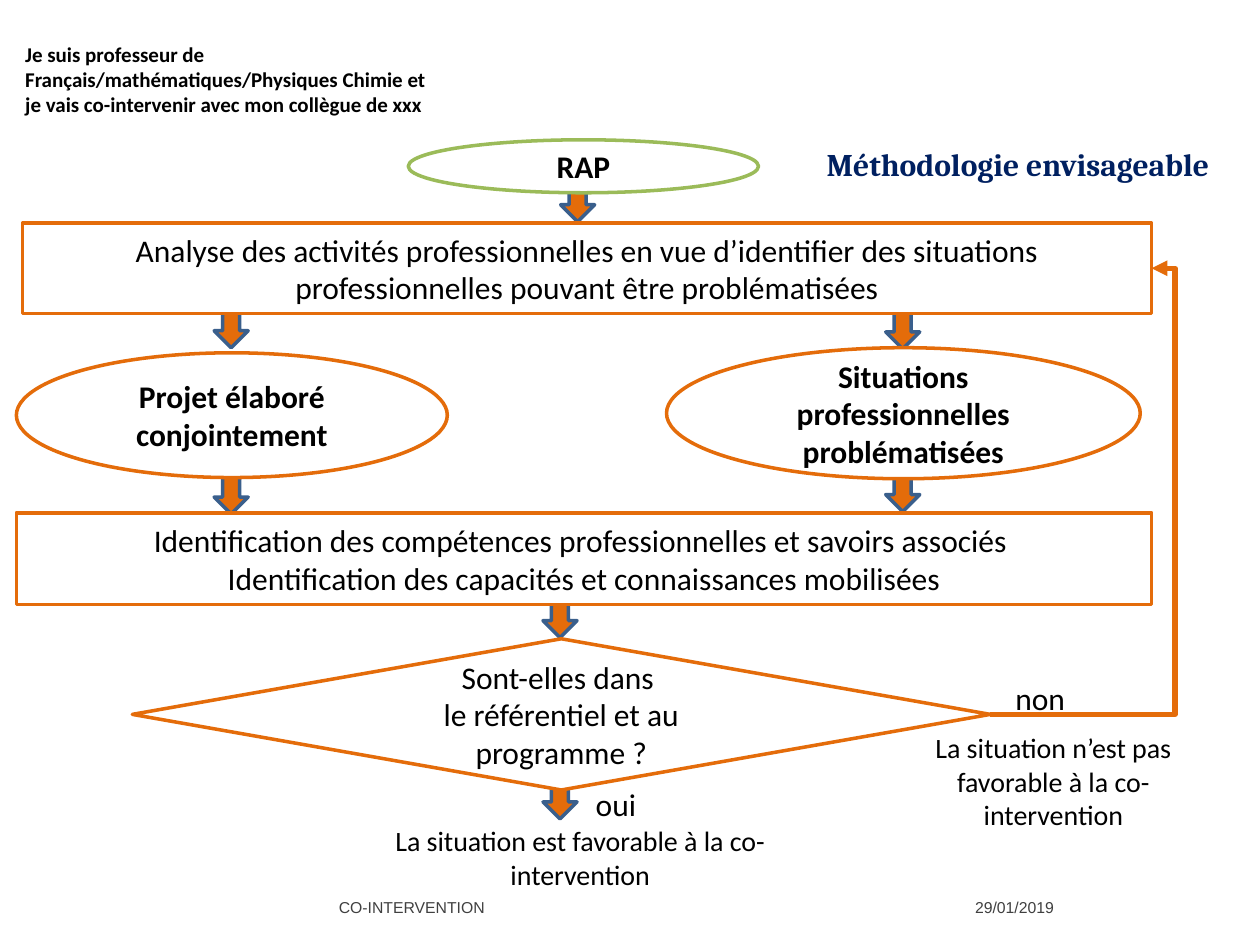
from lxml import etree
from pptx import Presentation
from pptx.dml.color import RGBColor
from pptx.enum.shapes import MSO_CONNECTOR, MSO_SHAPE
from pptx.enum.text import MSO_ANCHOR, PP_ALIGN
from pptx.oxml.ns import qn
from pptx.util import Inches, Pt

ORANGE, GREEN, BLUE = "E46C0A", "9BBB59", "3A5F8C"


def color(hex_string):
    return RGBColor.from_string(hex_string)


def write(shape, lines, size=18, bold=False, align=PP_ALIGN.LEFT,
          anchor=MSO_ANCHOR.TOP, font_name="Calibri", font_color="000000", margins=(0.1, 0.05)):
    frame = shape.text_frame
    frame.word_wrap = True
    frame.vertical_anchor = anchor
    frame.margin_left = frame.margin_right = Inches(margins[0])
    frame.margin_top = frame.margin_bottom = Inches(margins[1])
    for index, line in enumerate(lines):
        paragraph = frame.add_paragraph() if index else frame.paragraphs[0]
        paragraph.alignment = align
        for part_index, part in enumerate(line.split("\n")):
            if part_index:
                paragraph.add_line_break()
            run = paragraph.add_run()
            run.text = part
            run.font.name = font_name
            run.font.size = Pt(size)
            run.font.bold = bold
            run.font.color.rgb = color(font_color)


presentation = Presentation()
presentation.slide_width = Inches(10)
presentation.slide_height = Inches(7.5)
slide = presentation.slides.add_slide(presentation.slide_layouts[5])

title = slide.shapes.title
title.left, title.top = Inches(6.46), Inches(1.1)
title.width, title.height = Inches(3.4), Inches(0.4)
write(title, ["Méthodologie envisageable"], bold=True, font_name="Cambria", font_color="002060")
title.text_frame.word_wrap = False

arrows = [(1.7, 3.74), (7.03, 3.72), (4.31, 6.16), (4.31, 4.72),
          (7.03, 2.43), (1.7, 2.42), (4.45, 1.42)]
for left, top in arrows:
    arrow = slide.shapes.add_shape(MSO_SHAPE.DOWN_ARROW, Inches(left), Inches(top),
                                   Inches(0.27), Inches(0.34))
    arrow.shadow.inherit = False
    arrow.fill.solid()
    arrow.fill.fore_color.rgb = color(ORANGE)
    arrow.line.color.rgb = color(BLUE)
    arrow.line.width = Pt(2)

steps = [
    ("rap", MSO_SHAPE.OVAL, (3.24, 1.11, 2.78, 0.42), GREEN, True, ["RAP"]),
    ("analysis", MSO_SHAPE.RECTANGLE, (0.18, 1.77, 8.96, 0.72), ORANGE, False,
     ["Analyse des activités professionnelles en vue d’identifier des situations "
      "professionnelles pouvant être problématisées"]),
    ("identification", MSO_SHAPE.RECTANGLE, (0.13, 4.07, 9.01, 0.73), ORANGE, False,
     ["Identification des compétences professionnelles et savoirs associés ",
      "Identification des capacités et connaissances mobilisées"]),
    ("project", MSO_SHAPE.OVAL, (0.13, 2.8, 3.42, 0.99), ORANGE, True,
     ["Projet élaboré conjointement"]),
    ("situations", MSO_SHAPE.OVAL, (5.29, 2.76, 3.76, 1.04), ORANGE, True,
     ["Situations professionnelles problématisées"]),
    ("decision", MSO_SHAPE.FLOWCHART_DECISION, (1.05, 5.07, 6.81, 1.2), ORANGE, False,
     ["Sont-elles dans ", "le référentiel et au programme ?"]),
]
step_shapes = {}
for name, kind, box, outline, bold, lines in steps:
    shape = slide.shapes.add_shape(kind, *[Inches(value) for value in box])
    shape.shadow.inherit = False
    shape.fill.solid()
    shape.fill.fore_color.rgb = color("FFFFFF")
    shape.line.color.rgb = color(outline)
    shape.line.width = Pt(2)
    write(shape, lines, bold=bold, align=PP_ALIGN.CENTER, anchor=MSO_ANCHOR.MIDDLE,
          margins=(0.07, 0.04))
    step_shapes[name] = shape

loop = slide.shapes.add_connector(MSO_CONNECTOR.ELBOW, Inches(7.86), Inches(5.67),
                                  Inches(9.14), Inches(2.13))
loop.begin_connect(step_shapes["decision"], 3)
loop.end_connect(step_shapes["analysis"], 3)
loop.line.color.rgb = color(ORANGE)
loop.line.width = Pt(3)
etree.SubElement(loop.line._get_or_add_ln(), qn("a:tailEnd"), type="triangle")
properties = loop._element.spPr
etree.SubElement(properties, qn("a:effectLst"))
adjustments = properties.find(qn("a:prstGeom")).get_or_add_avLst()
etree.SubElement(adjustments, qn("a:gd"), name="adj1", fmla="val 114600")

intro = slide.shapes.add_textbox(Inches(0.13), Inches(0.29), Inches(3.6), Inches(0.93))
write(intro, ["Je suis professeur de Français/mathématiques/Physiques Chimie et\n"
              "je vais co-intervenir avec mon collègue de xxx"],
      size=12, bold=True, margins=(0.07, 0.04))

labels = [
    ((4.63, 6.18, 0.76, 0.4), 18, PP_ALIGN.LEFT, "oui"),
    ((7.96, 5.34, 0.87, 0.4), 18, PP_ALIGN.LEFT, "non"),
    ((2.97, 6.49, 3.27, 0.64), 16, PP_ALIGN.CENTER,
     "La situation est favorable à la co-intervention"),
    ((7.3, 5.75, 2.12, 1.21), 16, PP_ALIGN.CENTER,
     "La situation n’est pas favorable à la co-intervention"),
]
for box, size, align, text in labels:
    label = slide.shapes.add_textbox(*[Inches(value) for value in box])
    write(label, [text], size=size, align=align)

for left, width, text in [(2.59, 3.88, "CO-INTERVENTION"), (7.64, 1.27, "29/01/2019")]:
    footer = slide.shapes.add_textbox(Inches(left), Inches(7), Inches(width), Inches(0.4))
    write(footer, [text], size=9, anchor=MSO_ANCHOR.MIDDLE, font_name="Arial",
          font_color="404040")

presentation.save("out.pptx")
